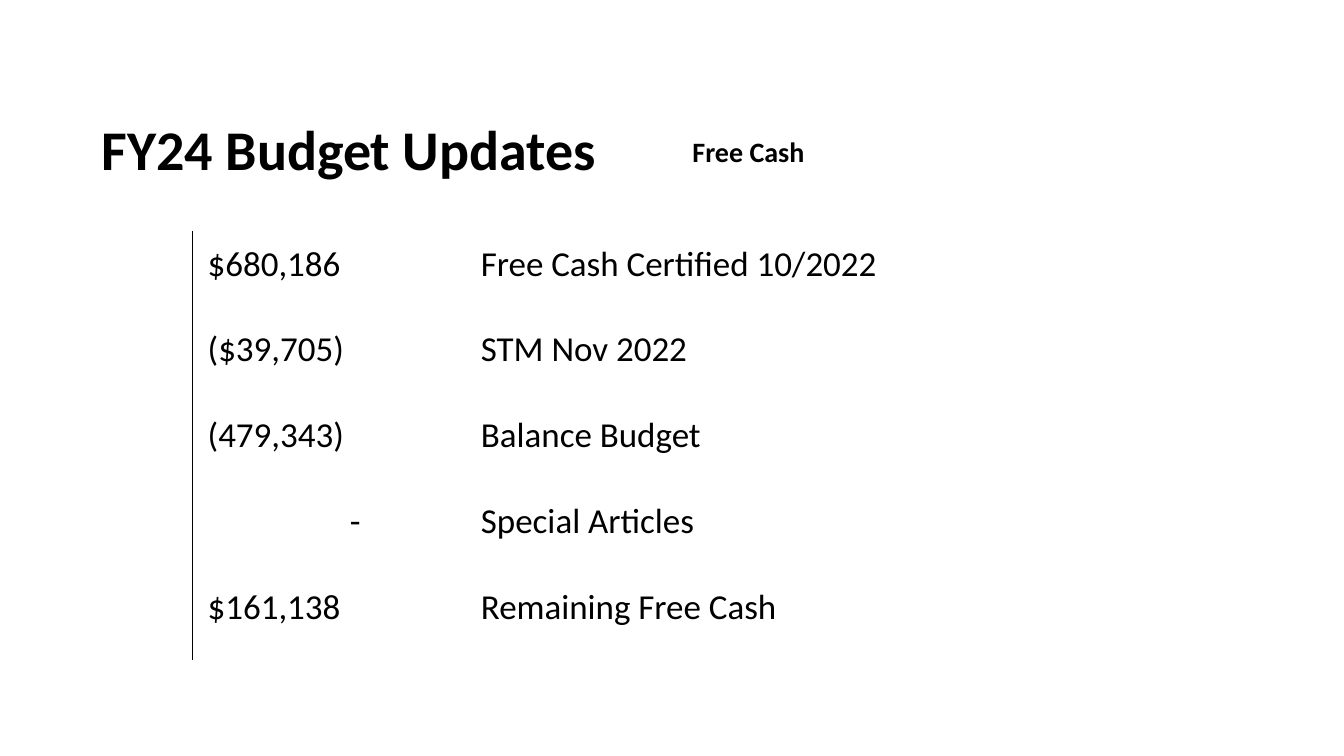
from lxml import etree
from pptx import Presentation
from pptx.dml.color import RGBColor
from pptx.enum.text import MSO_ANCHOR as Anchor
from pptx.oxml.ns import qn
from pptx.util import Inches, Pt

BLACK = RGBColor(0, 0, 0)
FONT = "Calibri"
DASH_INDENT = 1.41
ROWS = [
    ("$680,186", "Free Cash Certified 10/2022"),
    ("($39,705)", "STM Nov 2022"),
    ("(479,343)", "Balance Budget"),
    ("-", "Special Articles"),
    ("$161,138", "Remaining Free Cash"),
]


def write(frame, text, size, bold=False, spacing=1.0, after=0):
    par = frame.paragraphs[0]
    par.line_spacing = spacing
    par.space_after = Pt(after)
    run = par.add_run()
    run.text = text
    font = run.font
    font.name, font.size, font.bold = FONT, Pt(size), bold
    font.color.rgb = BLACK


def add_head(slide, box, text, size, after=0):
    shape = slide.shapes.add_textbox(*map(Inches, box))
    frame = shape.text_frame
    frame.word_wrap = True
    frame.vertical_anchor = Anchor.MIDDLE
    write(frame, text, size, bold=True, spacing=0.9, after=after)


def set_edges(cell, ruled):
    """Rule the left edge if asked, and clear the other edges."""
    props = cell._tc.get_or_add_tcPr()
    for spot, tag in enumerate(("a:lnL", "a:lnR", "a:lnT", "a:lnB")):
        line = etree.Element(qn(tag), w=str(Pt(0.75)))
        props.insert(spot, line)
        if ruled and tag == "a:lnL":
            fill = etree.SubElement(line, qn("a:solidFill"))
            etree.SubElement(fill, qn("a:srgbClr"), val=str(BLACK))
        else:
            etree.SubElement(line, qn("a:noFill"))


def fill_cell(cell, text, ruled):
    indent = DASH_INDENT if text == "-" else 0
    cell.margin_left = Inches(0.15 + indent)
    cell.margin_top = Inches(0.04)
    cell.margin_right = Inches(0.02)
    cell.margin_bottom = Inches(0.31)
    cell.vertical_anchor = Anchor.BOTTOM
    cell.fill.background()
    set_edges(cell, ruled)
    write(cell.text_frame, text, 25)


def add_cash(slide, box, widths):
    frame = slide.shapes.add_table(len(ROWS), len(widths), *map(Inches, box))
    table = frame.table
    table.first_row = table.horz_banding = False
    for col, width in zip(table.columns, widths):
        col.width = Inches(width)
    for r, row in enumerate(ROWS):
        for c, text in enumerate(row):
            fill_cell(table.cell(r, c), text, ruled=c == 0)


def main():
    deck = Presentation()
    deck.slide_width, deck.slide_height = Inches(13.33), Inches(7.5)
    slide = deck.slides.add_slide(deck.slide_layouts[6])
    add_head(slide, (0.91, 0.6, 5.65, 1.83), "FY24 Budget Updates", 40)
    add_head(slide, (6.77, 0.66, 5.64, 1.73), "Free Cash", 20, after=6)
    add_cash(slide, (1.91, 2.29, 9.72, 4.26), (2.71, 7.01))
    deck.save("out.pptx")


if __name__ == "__main__":
    main()
